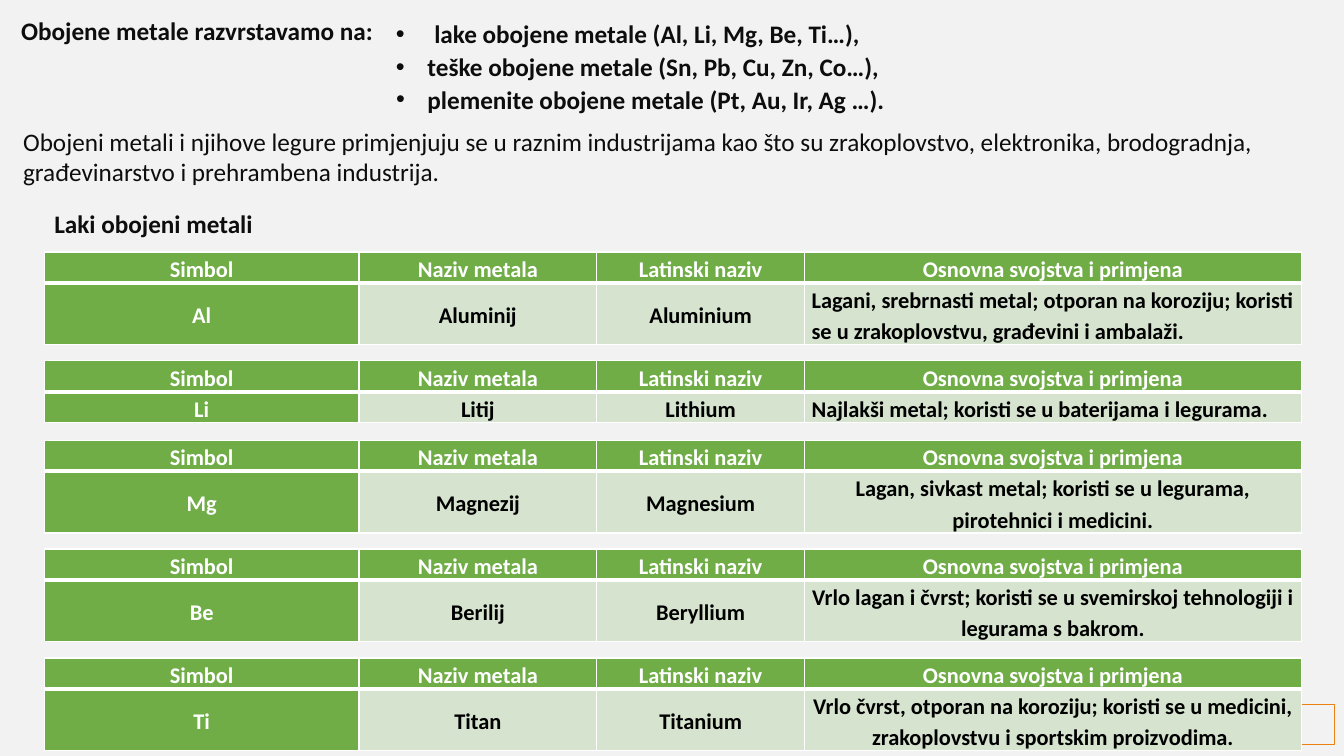
import pptx
import pptx.dml.color
import pptx.enum.shapes
import pptx.enum.text
import pptx.oxml.ns
import pptx.util
from lxml import etree

COLORS = {
    "background": "F2F2F2",
    "text": "0D0D0D",
    "cell_text": "000000",
    "white": "FFFFFF",
    "green": "70AD47",
    "pale_green": "D5E3CF",
    "orange": "EB8113",
}
ALIGN = pptx.enum.text.PP_ALIGN
FONT = "Calibri"

# The slide is a grid of 100 columns by 100 rows
SLIDE_WIDTH = pptx.util.Inches(13.33)
SLIDE_HEIGHT = pptx.util.Inches(7.5)
TEXT_HEIGHT = 5.33
TABLE_COLUMNS = [23.41, 17.7, 15.45, 36.98]
TABLE_LINE = 3.9
TABLE_GAP = 2.7
CELL_INSET = 0.53

GROUPS = [
    # text, box width, hanging indent
    ("lake obojene metale (Al, Li, Mg, Be, Ti…),", 36.31, 2.85),
    ("teške obojene metale (Sn, Pb, Cu, Zn, Co…),", 37.81, 2.34),
    ("plemenite obojene metale (Pt, Au, Ir, Ag …).", 38.71, 2.34),
]
HEADINGS = ["Simbol", "Naziv metala", "Latinski naziv", "Osnovna svojstva i primjena"]
METALS = [
    # cells, lines in the description, description alignment
    (["Al", "Aluminij", "Aluminium",
      "Lagani, srebrnasti metal; otporan na koroziju; koristi se u zrakoplovstvu, "
      "građevini i ambalaži."], 2, ALIGN.LEFT),
    (["Li", "Litij", "Lithium",
      "Najlakši metal; koristi se u baterijama i legurama."], 1, ALIGN.LEFT),
    (["Mg", "Magnezij", "Magnesium",
      "Lagan, sivkast metal; koristi se u legurama, pirotehnici i medicini."],
     2, ALIGN.CENTER),
    (["Be", "Berilij", "Beryllium",
      "Vrlo lagan i čvrst; koristi se u svemirskoj tehnologiji i legurama s bakrom."],
     2, ALIGN.CENTER),
    (["Ti", "Titan", "Titanium",
      "Vrlo čvrst, otporan na koroziju; koristi se u medicini, zrakoplovstvu i "
      "sportskim proizvodima."], 2, ALIGN.CENTER),
]


def across(columns):
    return int(SLIDE_WIDTH * columns / 100)


def down(rows):
    return int(SLIDE_HEIGHT * rows / 100)


def grid_box(left, top, width, height):
    return across(left), down(top), across(width), down(height)


def rgb(name):
    return pptx.dml.color.RGBColor.from_string(COLORS[name])


def style(paragraph, size, color, bold=False, alignment=ALIGN.LEFT):
    paragraph.alignment = alignment
    paragraph.font.name = FONT
    paragraph.font.size = pptx.util.Pt(size)
    paragraph.font.bold = bold
    paragraph.font.color.rgb = rgb(color)


def add_element(parent, tag, **attributes):
    return etree.SubElement(parent, pptx.oxml.ns.qn(tag), **attributes)


def add_text(slide, text, box, bold=True, wrap=False, hanging=0):
    shape = slide.shapes.add_textbox(*grid_box(*box))
    frame = shape.text_frame
    frame.word_wrap = wrap
    frame.auto_size = pptx.enum.text.MSO_AUTO_SIZE.SHAPE_TO_FIT_TEXT
    paragraph = frame.paragraphs[0]
    paragraph.text = text
    if hanging:
        properties = paragraph._p.get_or_add_pPr()
        properties.set("marL", str(across(hanging)))
        properties.set("indent", str(-across(hanging)))
        add_element(properties, "a:buFont", typeface="Arial")
        add_element(properties, "a:buChar", char="•")
    style(paragraph, 18, "text", bold)


def add_corner_frame(slide, box):
    shape = slide.shapes.add_shape(
        pptx.enum.shapes.MSO_SHAPE.RECTANGLE, *grid_box(*box))
    shape.shadow.inherit = False
    shape.fill.background()
    shape.line.color.rgb = rgb("orange")
    shape.line.width = pptx.util.Pt(0.75)


def add_borders(cell, top, bottom):
    properties = cell._tc.get_or_add_tcPr()
    for side, points in (("L", 1), ("R", 1), ("T", top), ("B", bottom)):
        line = add_element(properties, f"a:ln{side}", w=str(pptx.util.Pt(points)))
        fill = add_element(line, "a:solidFill")
        add_element(fill, "a:srgbClr", val=COLORS["white"])


def fill_cell(cell, text, is_green, alignment, top, bottom):
    add_borders(cell, top, bottom)
    cell.fill.solid()
    cell.fill.fore_color.rgb = rgb("green" if is_green else "pale_green")
    cell.margin_left = cell.margin_right = across(CELL_INSET)
    cell.margin_top = cell.margin_bottom = 0
    cell.vertical_anchor = pptx.enum.text.MSO_ANCHOR.MIDDLE
    paragraph = cell.text_frame.paragraphs[0]
    paragraph.text = text
    paragraph.line_spacing = 1.15
    paragraph.space_after = pptx.util.Pt(10)
    style(paragraph, 16, "white" if is_green else "cell_text", True, alignment)


def add_metal_table(slide, left, top, values, lines, description_alignment):
    box = grid_box(left, top, sum(TABLE_COLUMNS), TABLE_LINE * (1 + lines))
    table = slide.shapes.add_table(2, len(HEADINGS), *box).table
    table.rows[0].height = down(TABLE_LINE)
    table.rows[1].height = down(TABLE_LINE * lines)
    for index, width in enumerate(TABLE_COLUMNS):
        table.columns[index].width = across(width)
        is_description = index == len(TABLE_COLUMNS) - 1
        alignment = description_alignment if is_description else ALIGN.CENTER
        fill_cell(table.cell(0, index), HEADINGS[index], True, ALIGN.CENTER, 1, 3)
        fill_cell(table.cell(1, index), values[index], index == 0, alignment, 3, 1)


def add_classification(slide, left, top):
    add_text(slide, "Obojene metale razvrstavamo na:",
             (left, top, 27.91, TEXT_HEIGHT))
    for index, (text, width, hanging) in enumerate(GROUPS):
        add_text(slide, text,
                 (left + 27.9, top + 0.4 + 4.33 * index, width, TEXT_HEIGHT),
                 hanging=hanging)
    add_text(slide,
             "Obojeni metali i njihove legure primjenjuju se u raznim industrijama kao "
             "što su zrakoplovstvo, elektronika, brodogradnja, građevinarstvo i "
             "prehrambena industrija.",
             (left + 0.15, top + 14.67, 95.27, 9.47), bold=False, wrap=True)


def add_light_metals(slide, left, top):
    table_top = top + 6.4
    for values, lines, alignment in METALS:
        add_metal_table(slide, left, table_top, values, lines, alignment)
        table_top += TABLE_LINE * (1 + lines) + TABLE_GAP
    add_text(slide, "Laki obojeni metali", (left, top, 16.43, TEXT_HEIGHT))


def main():
    presentation = pptx.Presentation()
    presentation.slide_width = SLIDE_WIDTH
    presentation.slide_height = SLIDE_HEIGHT
    slide = presentation.slides.add_slide(presentation.slide_layouts[6])
    slide.background.fill.solid()
    slide.background.fill.fore_color.rgb = rgb("background")

    # The last table overlaps the corner frame
    add_corner_frame(slide, (93.1, 93.2, 6.23, TEXT_HEIGHT))
    add_classification(slide, 0.83, 1.4)
    add_light_metals(slide, 3.3, 26.93)
    presentation.save("out.pptx")


if __name__ == "__main__":
    main()
